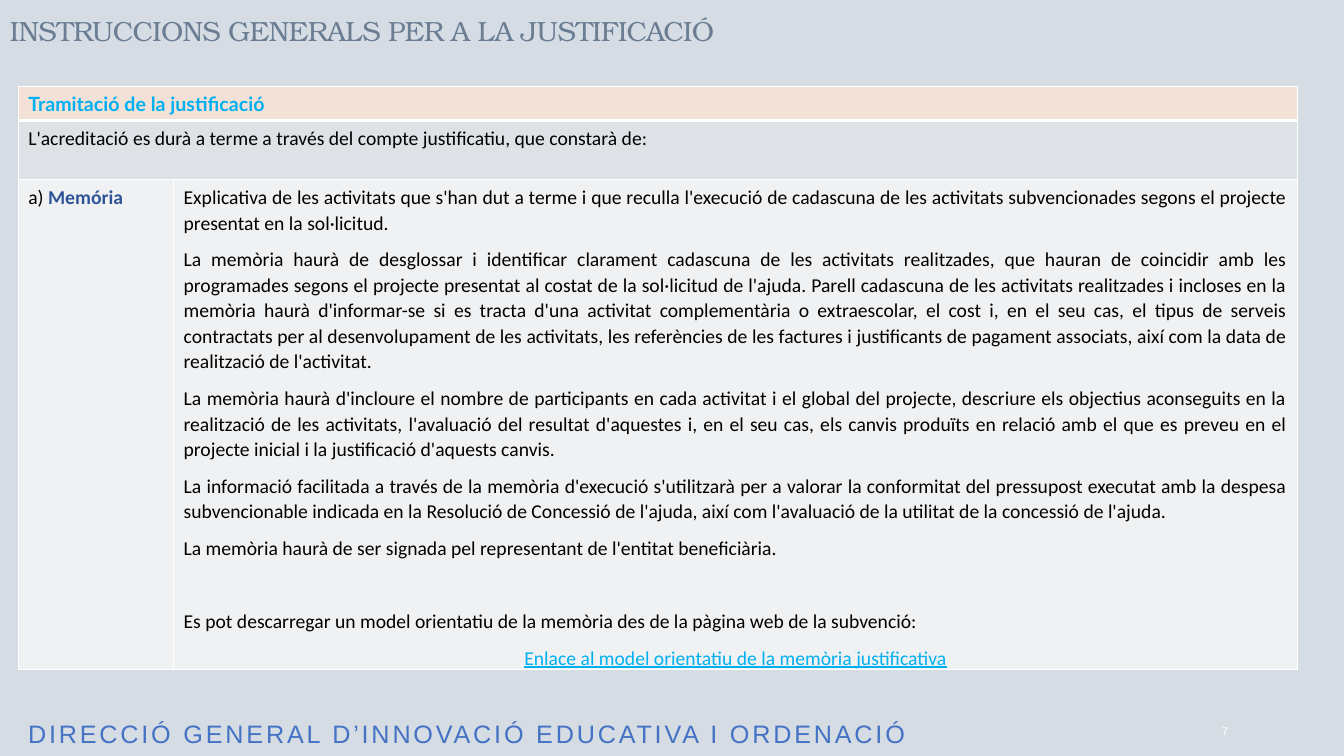
from lxml.etree import SubElement
from pptx import Presentation
from pptx.dml.color import RGBColor
from pptx.enum.text import MSO_ANCHOR, PP_ALIGN
from pptx.oxml.ns import qn
from pptx.util import Pt

BLACK, WHITE, CYAN, NAVY = "000000", "FFFFFF", "00B0F0", "2F5496"
BODY = [
    "Explicativa de les activitats que s'han dut a terme i que reculla l'execució de cadascuna de les activitats "
    "subvencionades segons el projecte presentat en la sol·licitud.",
    "La memòria haurà de desglossar i identificar clarament cadascuna de les activitats realitzades, que hauran de "
    "coincidir amb les programades segons el projecte presentat al costat de la sol·licitud de l'ajuda. Parell "
    "cadascuna de les activitats realitzades i incloses en la memòria haurà d'informar-se si es tracta d'una "
    "activitat complementària o extraescolar, el cost i, en el seu cas, el tipus de serveis contractats per al "
    "desenvolupament de les activitats, les referències de les factures i justificants de pagament associats, així "
    "com la data de realització de l'activitat.",
    "La memòria haurà d'incloure el nombre de participants en cada activitat i el global del projecte, descriure "
    "els objectius aconseguits en la realització de les activitats, l'avaluació del resultat d'aquestes i, en el "
    "seu cas, els canvis produïts en relació amb el que es preveu en el projecte inicial i la justificació "
    "d'aquests canvis.",
    "La informació facilitada a través de la memòria d'execució s'utilitzarà per a valorar la conformitat del "
    "pressupost executat amb la despesa subvencionable indicada en la Resolució de Concessió de l'ajuda, així com "
    "l'avaluació de la utilitat de la concessió de l'ajuda.",
    "La memòria haurà de ser signada pel representant de l'entitat beneficiària.",
]
MODEL = "Es pot descarregar un model orientatiu de la memòria des de la pàgina web de la subvenció:"
LINK = "Enlace al model orientatiu de la memòria justificativa"


def color(code):
    """Turn a hex string into a colour."""
    return RGBColor.from_string(code)


def write(para, text, size=14, font="Calibri", ink=BLACK, bold=False, under=False, track=0):
    """Add a formatted run to a paragraph."""
    run = para.add_run()
    run.text = text
    face = run.font
    face.size, face.name, face.bold, face.underline = Pt(size), font, bold, under
    face.color.rgb = color(ink)
    if track:
        run._r.get_or_add_rPr().set("spc", str(round(track * 100)))


def space(para, align=PP_ALIGN.JUSTIFY, line=1.07, before=0, after=8):
    """Set the alignment and spacing of a paragraph and return it."""
    para.alignment, para.line_spacing = align, line
    para.space_before, para.space_after = Pt(before), Pt(after)
    return para


def label(slide, box, text, line=1.0, anchor=MSO_ANCHOR.TOP, align=PP_ALIGN.LEFT, **style):
    """Place a one-paragraph text box."""
    frame = slide.shapes.add_textbox(*map(Pt, box)).text_frame
    frame.word_wrap, frame.vertical_anchor = True, anchor
    write(space(frame.paragraphs[0], align, line, after=0), text, **style)


def paint(cell, fill, **edges):
    """Fill a cell and draw white borders, one point wide unless given."""
    cell.fill.solid()
    cell.fill.fore_color.rgb = color(fill)
    props = cell._tc.get_or_add_tcPr()
    for spot, side in enumerate("LRTB"):
        edge = SubElement(props, qn(f"a:ln{side}"), w=str(Pt(edges.get(side, 1))))
        ink = SubElement(SubElement(edge, qn("a:solidFill")), qn("a:srgbClr"))
        ink.set("val", WHITE)
        props.insert(spot, edge)


def make_grid(slide, box, widths, heights):
    """Add a plain table with the given column and row sizes."""
    grid = slide.shapes.add_table(len(heights), len(widths), *map(Pt, box)).table
    for col, width in zip(grid.columns, widths):
        col.width = Pt(width)
    for row, height in zip(grid.rows, heights):
        row.height = Pt(height)
    return grid


def fill_grid(grid):
    """Paint the cells and write the instructions."""
    looks = [("F3E1D7", {"B": 3}), ("DEE1E6", {"T": 3}), ("EFF1F3", {})]
    for row, (fill, edges) in enumerate(looks):
        for col in range(2):
            paint(grid.cell(row, col), fill, **edges)
    for row in range(2):
        grid.cell(row, 0).merge(grid.cell(row, 1))
    head, intro, name, body = [grid.cell(*spot).text_frame for spot in ((0, 0), (1, 0), (2, 0), (2, 1))]
    write(head.paragraphs[0], "Tramitació de la justificació", font="Lato", ink=CYAN, bold=True)
    write(space(intro.paragraphs[0]),
          "L'acreditació es durà a terme a través del compte justificatiu, que constarà de:")
    para = space(name.paragraphs[0])
    write(para, "a) ")
    write(para, "Memória", ink=NAVY, bold=True)
    grid.cell(2, 1).margin_bottom = Pt(0)
    for count, text in enumerate(BODY):
        write(space(body.add_paragraph() if count else body.paragraphs[0]), text)
    write(space(body.add_paragraph(), before=26), MODEL)
    write(space(body.add_paragraph(), PP_ALIGN.CENTER, after=0), LINK, ink=CYAN, under=True)


def main():
    """Build the slide and save it."""
    deck = Presentation()
    deck.slide_width, deck.slide_height = Pt(960), Pt(540)
    slide = deck.slides.add_slide(deck.slide_layouts[6])
    slide.background.fill.solid()
    slide.background.fill.fore_color.rgb = color("D5DCE4")
    label(slide, (0, 0, 679, 37.5), "INSTRUCCIONS GENERALS PER A LA JUSTIFICACIÓ", line=0.9,
          anchor=MSO_ANCHOR.BOTTOM, size=19.8, font="TeX Gyre Bonum", ink="6A7D93", track=-0.5)
    fill_grid(make_grid(slide, (13, 62, 914, 416), (111, 803), (24, 42, 350)))
    label(slide, (13, 507.6, 690, 29.5), "DIRECCIÓ GENERAL D’INNOVACIÓ EDUCATIVA I ORDENACIÓ", line=1.1,
          size=18, font="Arial", ink="4472C4", track=2)
    label(slide, (855, 512, 40, 20), "7", anchor=MSO_ANCHOR.MIDDLE, align=PP_ALIGN.CENTER,
          size=8, font="Arial", ink=WHITE)
    deck.save("out.pptx")


if __name__ == "__main__":
    main()
